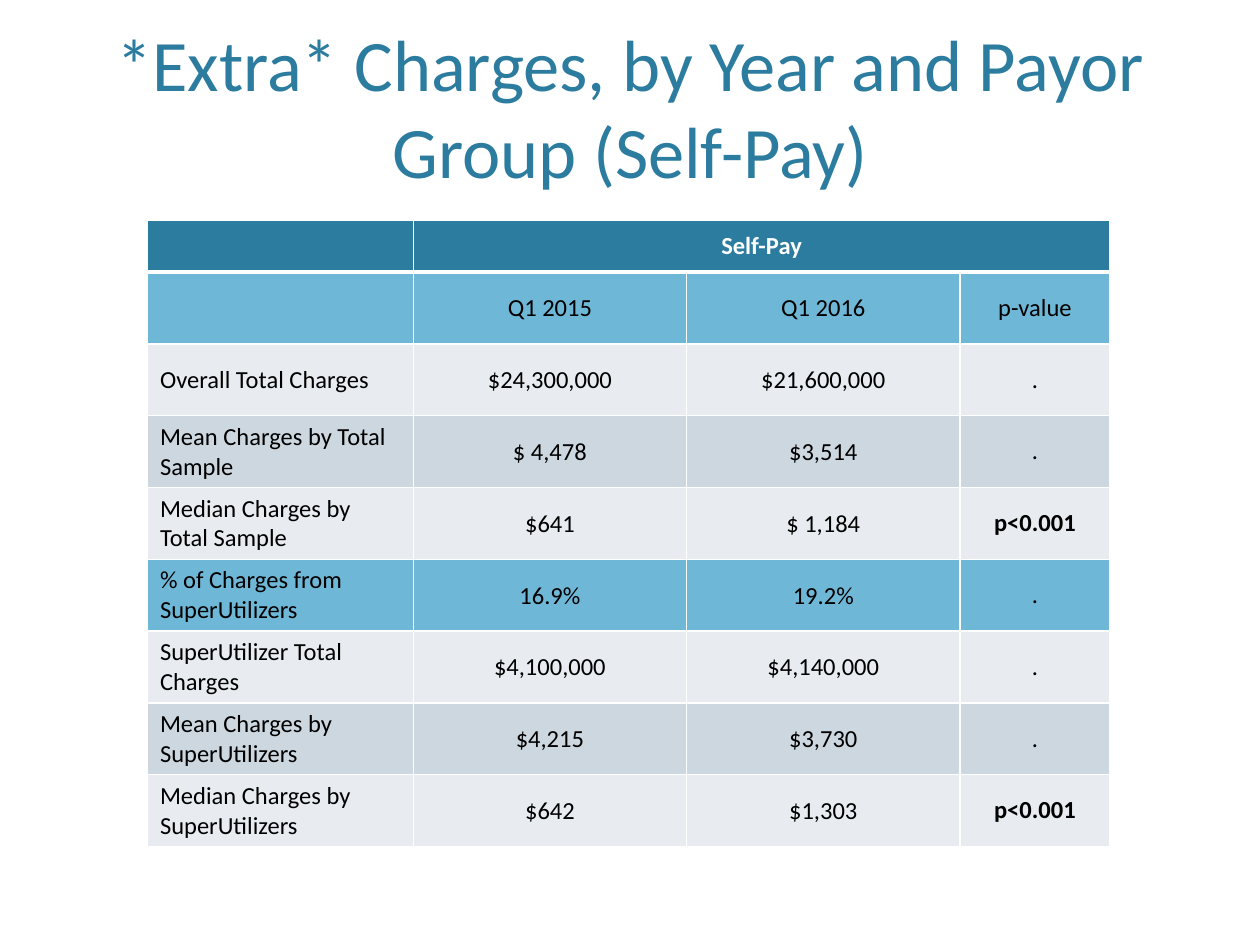
from lxml.etree import SubElement
from pptx import Presentation
from pptx.dml.color import RGBColor
from pptx.enum.text import MSO_ANCHOR as Anchor, PP_ALIGN as Align
from pptx.oxml.ns import qn
from pptx.util import Inches, Pt

FONT = "Calibri"
WHITE, BLACK = "FFFFFF", "000000"
TEAL, SKY, PALE, GREY = "2C7C9F", "6FB7D7", "E8ECF0", "CDD7DF"
COLUMN_WIDTHS = [2.11, 2.17, 2.17, 1.19]
HEADER_HEIGHT = 0.41
ROWS = [
    (TEAL, ["", "Self-Pay", "", ""]),
    (SKY, ["", "Q1 2015", "Q1 2016", "p-value"]),
    (PALE, ["Overall Total Charges", "$24,300,000", "$21,600,000", "."]),
    (GREY, ["Mean Charges by Total Sample", "$ 4,478", "$3,514", "."]),
    (PALE, ["Median Charges by Total Sample", "$641", "$ 1,184", "p<0.001"]),
    (SKY, ["% of Charges from SuperUtilizers", "16.9%", "19.2%", "."]),
    (PALE, ["SuperUtilizer Total Charges", "$4,100,000", "$4,140,000", "."]),
    (GREY, ["Mean Charges by SuperUtilizers", "$4,215", "$3,730", "."]),
    (PALE, ["Median Charges by SuperUtilizers", "$642", "$1,303", "p<0.001"]),
]


def color(value):
    """Turn a hex string into a colour."""
    return RGBColor.from_string(value)


def style_paragraph(para, size, hue, bold=False, align=Align.CENTER):
    """Set the alignment and font of a paragraph."""
    para.alignment = align
    para.font.name = FONT
    para.font.size = Pt(size)
    para.font.bold = bold
    para.font.color.rgb = color(hue)


def add_title(page, left, top, width, height):
    """Place the title at the bottom of its box."""
    box = page.shapes.add_textbox(*map(Inches, (left, top, width, height)))
    frame = box.text_frame
    frame.word_wrap = True
    frame.vertical_anchor = Anchor.BOTTOM
    frame.text = "*Extra* Charges, by Year and Payor Group (Self-Pay)"
    style_paragraph(frame.paragraphs[0], 41.4, TEAL)


def add_borders(cell, top, bottom):
    """Draw white borders, with the top and bottom widths in points."""
    properties = cell._tc.get_or_add_tcPr()
    for tag, width in (("a:lnL", 1), ("a:lnR", 1), ("a:lnT", top), ("a:lnB", bottom)):
        line = SubElement(properties, qn(tag), w=str(Pt(width)))
        fill = SubElement(line, qn("a:solidFill"))
        SubElement(fill, qn("a:srgbClr"), val=WHITE)


def fill_cell(cell, text, row, column, fill):
    """Write and style one table cell."""
    header = row == 0
    cell.text = text
    cell.vertical_anchor = Anchor.MIDDLE
    if row > 1 and column in (1, 2):
        cell.margin_left = cell.margin_right = cell.margin_top = Inches(0.01)
        cell.margin_bottom = 0
    add_borders(cell, 3 if row == 1 else 1, 3 if header else 1)
    cell.fill.solid()
    cell.fill.fore_color.rgb = color(fill)
    style_paragraph(
        cell.text_frame.paragraphs[0],
        14,
        WHITE if header else BLACK,
        header or text.startswith("p<"),
        Align.CENTER if column else Align.LEFT,
    )


def add_charges_table(page, left, top, width, height):
    """Place the table of charges in its box."""
    frame = page.shapes.add_table(
        len(ROWS), len(COLUMN_WIDTHS), *map(Inches, (left, top, width, height))
    )
    table = frame.table
    table.first_row = table.horz_banding = False
    for column, size in zip(table.columns, COLUMN_WIDTHS):
        column.width = Inches(size)
    body_height = (height - HEADER_HEIGHT) / (len(ROWS) - 1)
    for row, (fill, texts) in enumerate(ROWS):
        table.rows[row].height = Inches(body_height if row else HEADER_HEIGHT)
        for column, text in enumerate(texts):
            fill_cell(table.cell(row, column), text, row, column, fill)
    table.cell(0, 1).merge(table.cell(0, 3))


def main():
    """Build and save the slide."""
    deck = Presentation()
    deck.slide_width, deck.slide_height = Inches(10), Inches(7.5)
    page = deck.slides.add_slide(deck.slide_layouts[6])
    add_title(page, 0.6, 0.12, 8.8, 1.46)
    add_charges_table(page, 1.17, 1.75, 7.64, 4.97)
    deck.save("out.pptx")


if __name__ == "__main__":
    main()
